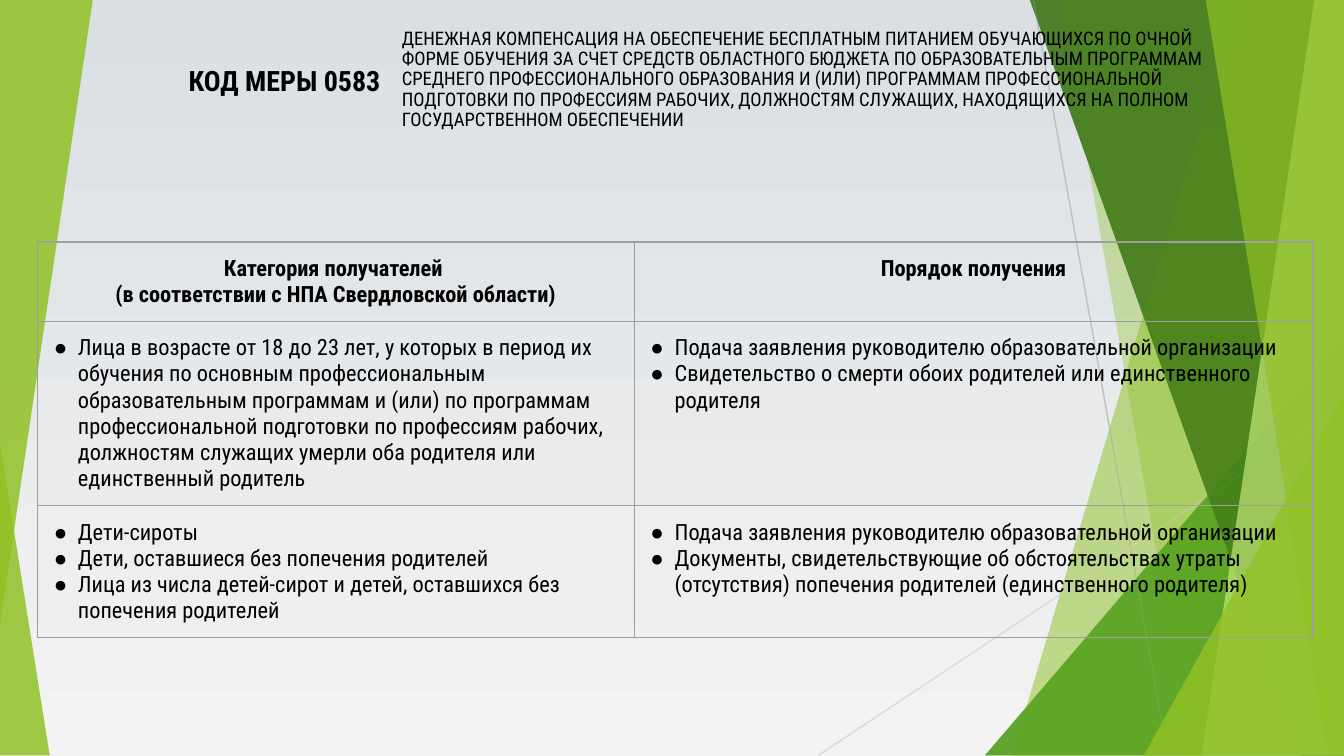
from lxml import etree
from pptx import Presentation
from pptx.dml.color import RGBColor
from pptx.enum.shapes import MSO_CONNECTOR, MSO_SHAPE
from pptx.enum.text import MSO_ANCHOR, MSO_AUTO_SIZE, PP_ALIGN
from pptx.oxml import parse_xml
from pptx.oxml.ns import nsdecls, qn
from pptx.util import Inches, Pt

TRIANGLE = MSO_SHAPE.ISOSCELES_TRIANGLE
STRAIGHT = MSO_CONNECTOR.STRAIGHT
MIDDLE = MSO_ANCHOR.MIDDLE
NO_AUTOFIT = MSO_AUTO_SIZE.NONE
LEFT, CENTER, RIGHT = PP_ALIGN.LEFT, PP_ALIGN.CENTER, PP_ALIGN.RIGHT

BLACK = RGBColor(0x00, 0x00, 0x00)
LIME = RGBColor(0x90, 0xC2, 0x26)
GREEN = RGBColor(0x54, 0xA0, 0x21)
DARK_GREEN = RGBColor(0x3F, 0x78, 0x19)
PALE_LIME = RGBColor(0xC0, 0xE4, 0x74)
SKY = RGBColor(0xDA, 0xDF, 0xE4)
MIST = RGBColor(0xF3, 0xF3, 0xF3)
RAY_GRAY = RGBColor(0xBF, 0xBF, 0xBF)
RAY_LIGHT = RGBColor(0xD9, 0xD9, 0xD9)
FONT = "Roboto Condensed"
BULLET_FONT = "Arial"
TOP, BOTTOM, RIGHT_EDGE = -0.01, 5.62, 10


def paint(shape, color, opacity):
    """Fill a shape with a see-through colour, without outline or shadow."""
    shape.shadow.inherit = False
    shape.line.fill.background()
    shape.fill.solid()
    shape.fill.fore_color.rgb = color
    color_element = shape.fill._xPr.find(qn("a:solidFill"))[0]
    etree.SubElement(color_element, qn("a:alpha"), val=str(opacity * 1000))


def add_text(paragraph, text, size, bold=False):
    run = paragraph.add_run()
    run.text = text
    run.font.name = FONT
    run.font.size = Pt(size)
    run.font.bold = bold
    run.font.color.rgb = BLACK


prs = Presentation()
prs.slide_width = Inches(10)
prs.slide_height = Inches(10) * 9 // 16
slide = prs.slides.add_slide(prs.slide_layouts[5])
shapes = slide.shapes

backdrop = slide.background.fill
backdrop.gradient()
backdrop.gradient_angle = 270
for stop, color in zip(backdrop.gradient_stops, (SKY, MIST)):
    stop.color.rgb = color

# Bands reach the right edge: (top x, bottom x, colour, opacity).
# Triangles: (left, top, width, height, apex position, rotation, colour, opacity).
right_facets = [
    (9.21, 7.53, LIME, 30),
    (7.88, 8.87, LIME, 20),
    (7.33, 2.5, 2.67, 3.12, 1, 0, GREEN, 72),
    (7.66, 9.68, DARK_GREEN, 70),
    (9.78, 8.94, PALE_LIME, 70),
    (8.97, 9.88, LIME, 65),
    (8.51, 2.94, 1.49, 2.68, 1, 0, LIME, 80),
]
lower_left = (0, 3.29, 0.37, 2.33, 0, 0, LIME, 85)
upper_left = (0, 0, 0.69, 4.65, 1, 180, LIME, 85)
rays = [(7.69, 0, 8.69, 5.63, RAY_GRAY), (10, 3.02, 6.09, 5.62, RAY_LIGHT)]

# Two layers of the same facets, with the rays between them
for left_facet, layer_rays in ((lower_left, []), (upper_left, rays)):
    for x1, y1, x2, y2, color in layer_rays:
        ray = shapes.add_connector(STRAIGHT, Inches(x1), Inches(y1), Inches(x2), Inches(y2))
        ray.line.color.rgb = color
        ray.line.width = Pt(0.75)
        etree.SubElement(ray._element.spPr, qn("a:effectLst"))
    for *geometry, color, opacity in right_facets + [left_facet]:
        if len(geometry) == 2:
            top_x, bottom_x = geometry
            outline = shapes.build_freeform(Inches(top_x), Inches(TOP))
            corners = [(RIGHT_EDGE, TOP), (RIGHT_EDGE, BOTTOM), (bottom_x, BOTTOM)]
            outline.add_line_segments([(Inches(x), Inches(y)) for x, y in corners])
            facet = outline.convert_to_shape()
        else:
            *box, apex, rotation = geometry
            facet = shapes.add_shape(TRIANGLE, *map(Inches, box))
            facet.adjustments[0] = apex
            facet.rotation = rotation
        paint(facet, color, opacity)

headers = [
    ["Категория получателей ", "(в соответствии с НПА Свердловской области)"],
    ["Порядок получения"],
]
application = "Подача заявления руководителю образовательной организации"
measures = [
    [
        ["Лица в возрасте от 18 до 23 лет, у которых в период их обучения по основным "
         "профессиональным образовательным программам и (или) по программам "
         "профессиональной подготовки по профессиям рабочих, должностям служащих "
         "умерли оба родителя или единственный родитель"],
        [application,
         "Свидетельство о смерти обоих родителей или единственного родителя"],
    ],
    [
        ["Дети-сироты",
         "Дети, оставшиеся без попечения родителей",
         "Лица из числа детей-сирот и детей, оставшихся без попечения родителей"],
        [application,
         "Документы, свидетельствующие об обстоятельствах утраты (отсутствия) "
         "попечения родителей (единственного родителя)"],
    ],
]

table = shapes.add_table(3, 2, Inches(0.28), Inches(1.8), Inches(9.49), Inches(2.94)).table
table.first_row = False
table.horz_banding = False
for column, width in zip(table.columns, (4.44, 5.05)):
    column.width = Inches(width)
for row, height in zip(table.rows, (0.59, 1.37, 0.98)):
    row.height = Inches(height)

for row_index, row_content in enumerate([headers] + measures):
    for column_index, lines in enumerate(row_content):
        cell = table.cell(row_index, column_index)
        cell.margin_left = cell.margin_right = Inches(0.1)
        cell.margin_top = cell.margin_bottom = Inches(0.1)
        cell.fill.background()
        for position, side in enumerate(("lnL", "lnR", "lnT", "lnB")):
            cell._tc.tcPr.insert(position, parse_xml(
                f'<a:{side} {nsdecls("a")} w="{Pt(0.75)}"><a:solidFill>'
                f'<a:srgbClr val="9E9E9E"/></a:solidFill></a:{side}>'))
        paragraph = cell.text_frame.paragraphs[0]
        for line_index, line in enumerate(lines):
            if row_index == 0:
                paragraph.alignment = CENTER
                if line_index:
                    paragraph.add_line_break()
                add_text(paragraph, line, 12, bold=True)
                continue
            if line_index:
                paragraph = cell.text_frame.add_paragraph()
            bullet = paragraph._p.get_or_add_pPr()
            bullet.set("marL", str(Inches(0.2)))
            bullet.set("indent", str(Inches(-0.18)))
            color = etree.SubElement(bullet, qn("a:buClr"))
            etree.SubElement(color, qn("a:srgbClr"), val=str(BLACK))
            etree.SubElement(bullet, qn("a:buFont"), typeface=BULLET_FONT)
            etree.SubElement(bullet, qn("a:buChar"), char="●")
            add_text(paragraph, line, 12)

title = shapes.title
title.left, title.top = Inches(2.92), Inches(0.22)
title.width, title.height = Inches(6.41), Inches(0.75)
shapes._spTree.append(title._element)  # bring in front of the facets
frame = title.text_frame
frame.auto_size = NO_AUTOFIT
frame.word_wrap = True
frame.vertical_anchor = MIDDLE
frame.margin_left = frame.margin_right = Inches(0.07)
frame.margin_top = frame.margin_bottom = Inches(0.04)
frame.paragraphs[0].alignment = LEFT
frame.paragraphs[0].line_spacing = 0.9
add_text(
    frame.paragraphs[0],
    "ДЕНЕЖНАЯ КОМПЕНСАЦИЯ НА ОБЕСПЕЧЕНИЕ БЕСПЛАТНЫМ ПИТАНИЕМ ОБУЧАЮЩИХСЯ ПО ОЧНОЙ "
    "ФОРМЕ ОБУЧЕНИЯ ЗА СЧЕТ СРЕДСТВ ОБЛАСТНОГО БЮДЖЕТА ПО ОБРАЗОВАТЕЛЬНЫМ ПРОГРАММАМ "
    "СРЕДНЕГО ПРОФЕССИОНАЛЬНОГО ОБРАЗОВАНИЯ И (ИЛИ) ПРОГРАММАМ ПРОФЕССИОНАЛЬНОЙ "
    "ПОДГОТОВКИ ПО ПРОФЕССИЯМ РАБОЧИХ, ДОЛЖНОСТЯМ СЛУЖАЩИХ, НАХОДЯЩИХСЯ НА ПОЛНОМ "
    "ГОСУДАРСТВЕННОМ ОБЕСПЕЧЕНИИ",
    10,
)

measure_code = shapes.add_textbox(Inches(0.82), Inches(0.22), Inches(2.11), Inches(0.75))
frame = measure_code.text_frame
frame.word_wrap = True
frame.vertical_anchor = MIDDLE
frame.margin_left = frame.margin_right = Inches(0.1)
frame.margin_top = frame.margin_bottom = Inches(0.1)
frame.paragraphs[0].alignment = RIGHT
add_text(frame.paragraphs[0], "КОД МЕРЫ 0583", 15, bold=True)

prs.save("out.pptx")
